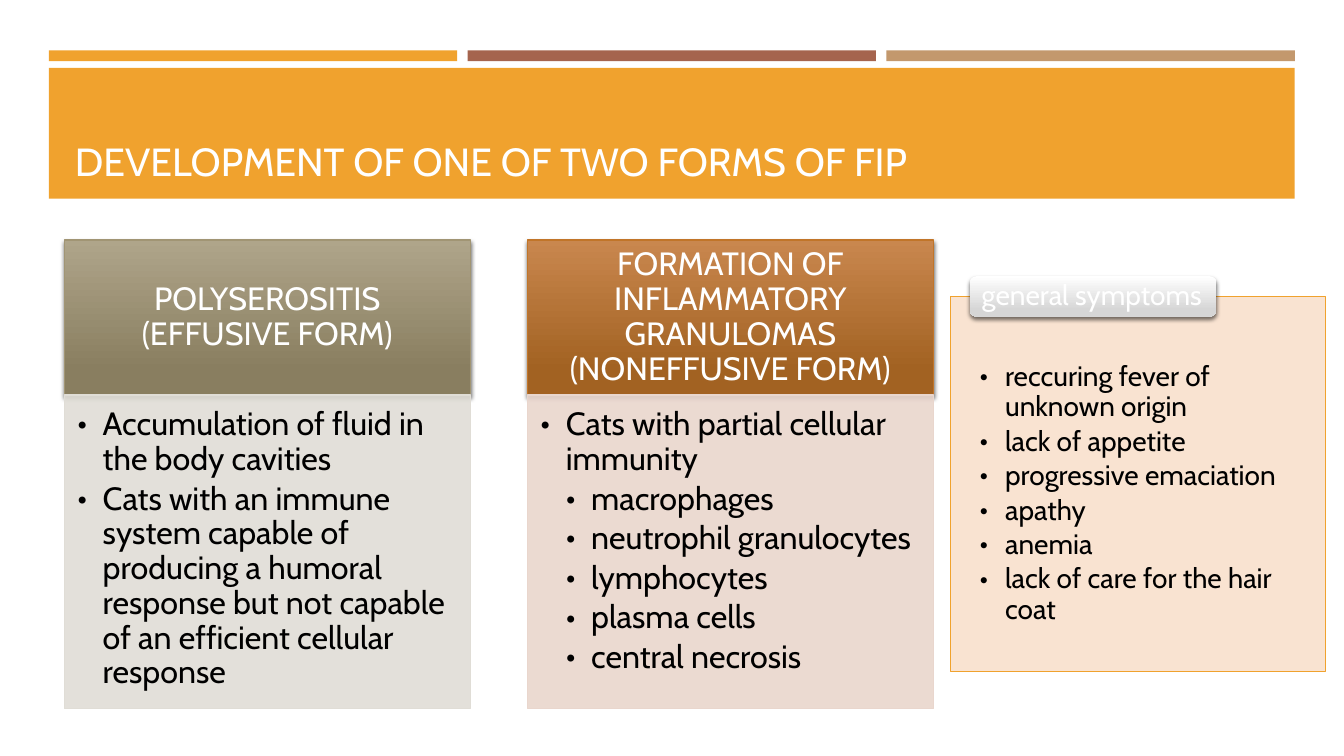
"""Build the slide on the two forms of FIP."""
from lxml import etree
from pptx import Presentation
from pptx import util as u
from pptx.dml.color import RGBColor
from pptx.enum import shapes, text
from pptx.oxml import ns

FONT = "Cabin"
COLORS = {
    "orange": "F0A22E", "brown": "A5644E", "tan": "C3986D",
    "white": "FFFFFF", "black": "000000", "silver": "D6D6D6",
    "olive_top": "AFA58A", "olive_bottom": "897E60", "olive_line": "A19574", "olive_pale": "E0DDD6",
    "copper_top": "C9874E", "copper_bottom": "A26222", "copper_line": "C17529", "copper_pale": "E9D6CD",
    "peach": "F9E0CD",
}
FORMS = [
    ("olive", "POLYSEROSITIS (EFFUSIVE FORM)", [
        (0, "Accumulation of fluid in the body cavities"),
        (0, "Cats with an immune system capable of producing a humoral response "
            "but not capable of an efficient cellular response")]),
    ("copper", "FORMATION OF INFLAMMATORY GRANULOMAS (NONEFFUSIVE FORM)", [
        (0, "Cats with partial cellular immunity"),
        (1, "macrophages"), (1, "neutrophil granulocytes"), (1, "lymphocytes"),
        (1, "plasma cells"), (1, "central necrosis")]),
]
SYMPTOMS = ["reccuring fever of unknown origin", "lack of appetite", "progressive emaciation",
            "apathy", "anemia", "lack of care for the hair coat"]


def color(name):
    """Return the named colour."""
    return RGBColor.from_string(COLORS[name])


def add_element(parent, tag, **attributes):
    """Append a drawing element to its parent and return it."""
    return etree.SubElement(parent, ns.qn(tag), attributes)


def add_box(slide, box, fill, line=None, kind=shapes.MSO_SHAPE.RECTANGLE):
    """Add a shape with a plain fill, or a vertical gradient for a pair of colours."""
    shape = slide.shapes.add_shape(kind, *[u.Cm(length) for length in box])
    shape.shadow.inherit = False
    if isinstance(fill, tuple):
        shape.fill.gradient()
        shape.fill.gradient_angle = 270
        for stop, name, position in zip(shape.fill.gradient_stops, fill, (0, 0.84)):
            stop.color.rgb = color(name)
            stop.position = position
    else:
        shape.fill.solid()
        shape.fill.fore_color.rgb = color(fill)
    if line:
        shape.line.color.rgb = color(line)
        shape.line.width = u.Pt(1)
    else:
        shape.line.fill.background()
    return shape


def add_shadow(shape):
    """Give a shape a soft shadow that falls straight down."""
    effects = shape.element.spPr.find(ns.qn("a:effectLst"))
    shadow = add_element(effects, "a:outerShdw", blurRad=str(u.Pt(3)), dist=str(u.Pt(2)),
                         dir="5400000", algn="ctr", rotWithShape="0")
    tone = add_element(shadow, "a:srgbClr", val=COLORS["black"])
    add_element(tone, "a:alpha", val="55000")


def soften(shape):
    """Make the plain fill of a shape slightly transparent."""
    tone = shape.element.spPr.find(ns.qn("a:solidFill"))[0]
    add_element(tone, "a:alpha", val="90000")


def write(shape, lines, size, tone, insets, anchor="TOP", align="LEFT", after=0, bullets=False):
    """Write (level, words) lines into a shape."""
    frame = shape.text_frame
    frame.word_wrap = True
    frame.vertical_anchor = text.MSO_ANCHOR[anchor]
    frame.margin_left, frame.margin_top, frame.margin_right, frame.margin_bottom = [u.Cm(i) for i in insets]
    frame.text = "\n".join(words for _, words in lines)
    for para, (level, _) in zip(frame.paragraphs, lines):
        para.alignment = text.PP_ALIGN[align]
        para.line_spacing = 0.9
        para.space_after = u.Pt(after)
        if bullets:
            para.level = level
            properties = para._p.get_or_add_pPr()
            properties.set("marL", str(u.Cm(0.64 * (level + 1))))
            properties.set("indent", str(u.Cm(-0.64)))
            add_element(properties, "a:buFont", typeface=FONT)
            add_element(properties, "a:buChar", char="•")
        for span in para.runs:
            span.font.name = FONT
            span.font.size = u.Pt(size)
            span.font.color.rgb = color(tone)


def add_banner(slide, left, top, width):
    """Draw the three stripes and the title band."""
    gap = 0.26
    stripe = (width - 2 * gap) / 3
    for index, name in enumerate(("orange", "brown", "tan")):
        add_box(slide, (left + index * (stripe + gap), top, stripe, 0.27), name)
    band = add_box(slide, (left, top + 0.44, width, 3.3), "orange")
    write(band, [(0, "DEVELOPMENT OF ONE OF TWO FORMS OF FIP")], 28, "white",
          (0.66, 0.25, 0.4, 0.36), anchor="BOTTOM")


def add_form(slide, left, top, width, scheme, heading, points):
    """Draw one form of the disease: a heading above its points."""
    head_height, body_height = 3.9, 7.9
    head = add_box(slide, (left, top, width, head_height),
                   (scheme + "_top", scheme + "_bottom"), scheme + "_line")
    add_shadow(head)
    write(head, [(0, heading)], 23, "white", (0.46, 0.26, 0.46, 0.26), anchor="MIDDLE", align="CENTER")
    body = add_box(slide, (left, top + head_height, width, body_height), scheme + "_pale", scheme + "_pale")
    soften(body)
    write(body, points, 23, "black", (0.33, 0.33, 0.46, 0.5), after=3.45, bullets=True)


def add_symptoms(slide, left, top, side):
    """Draw the square list of symptoms with its label on the top edge."""
    panel = add_box(slide, (left, top, side, side), "peach", "orange")
    soften(panel)
    write(panel, [(0, words) for words in SYMPTOMS], 20, "black",
          (0.74, 1.66, 0.74, 0.4), after=3, bullets=True)
    label = add_box(slide, (left + 0.49, top - 0.51, 6.22, 1.02), ("white", "silver"),
                    kind=shapes.MSO_SHAPE.ROUNDED_RECTANGLE)
    add_shadow(label)
    write(label, [(0, "general symptoms")], 20, "white", (0.25, 0, 0, 0), anchor="MIDDLE")


def main():
    """Build and save the deck."""
    deck = Presentation()
    deck.slide_width, deck.slide_height = u.Cm(33.87), u.Cm(19.05)
    slide = deck.slides.add_slide(deck.slide_layouts[6])
    add_banner(slide, 1.23, 1.27, 31.4)
    for index, form in enumerate(FORMS):
        add_form(slide, 1.62 + index * 11.67, 6.05, 10.24, *form)
    add_symptoms(slide, 23.95, 7.47, 9.45)
    deck.save("out.pptx")


if __name__ == "__main__":
    main()
